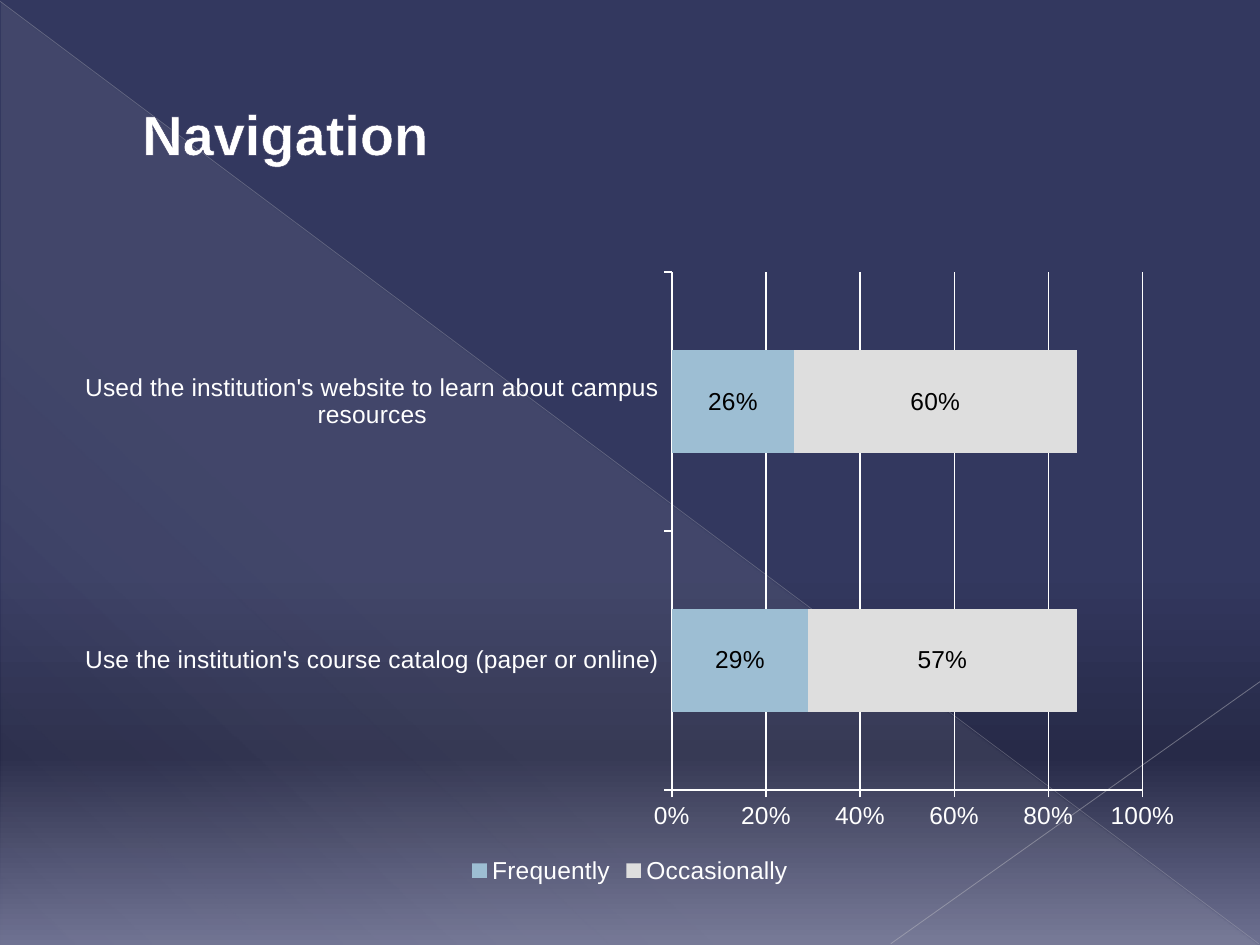
import pptx
import pptx.util
import pptx.chart.data
import pptx.dml.color
import pptx.enum.chart
import pptx.enum.shapes
import pptx.enum.text
import pptx.oxml
import pptx.oxml.ns

Pt = pptx.util.Pt
qn = pptx.oxml.ns.qn
RGB = pptx.dml.color.RGBColor.from_string
NS = pptx.oxml.ns.nsdecls("a")
COLORS = {
    "navy": "33385F", "dark": "272A48", "haze": "6E7191", "grey": "DEDEDE",
    "diagonal": "B7B7BE", "corner": "BFBFC5", "white": "FFFFFF",
    "black": "000000", "blue": "9DBED3", "outline": "3A3A60",
}


def set_gradient(fill, root, stops, angle):
    fill.gradient()
    old = next(root.iter(qn("a:gradFill")))
    gs = "".join(
        f'<a:gs pos="{pos * 1000}"><a:srgbClr val="{COLORS[color]}">'
        f'<a:alpha val="{alpha * 1000}"/></a:srgbClr></a:gs>'
        for pos, color, alpha in stops)
    new = pptx.oxml.parse_xml(
        f'<a:gradFill {NS} rotWithShape="1"><a:gsLst>{gs}</a:gsLst>'
        f'<a:lin ang="{angle * 60000}" scaled="0"/></a:gradFill>')
    old.getparent().replace(old, new)


def set_font(font, **values):
    font.color.rgb = RGB(COLORS[values.pop("color")])
    for name, value in values.items():
        setattr(font, name, value)


prs = pptx.Presentation()
prs.slide_width, prs.slide_height = Pt(720), Pt(540)
s = prs.slides.add_slide(prs.slide_layouts[6])
set_gradient(s.background.fill, s.element,
             [(60, "navy", 100), (80, "dark", 100), (100, "haze", 100)], 90)

sp = s.shapes.add_shape(pptx.enum.shapes.MSO_SHAPE.RIGHT_TRIANGLE,
                        Pt(0.72), Pt(1.44), Pt(718.56), Pt(538.56))
sp.shadow.inherit = False
sp.line.fill.background()
set_gradient(sp.fill, sp.element,
             [(0, "grey", 10), (70, "grey", 8), (100, "grey", 1)], 133)

for x1, y1, x2, y2, color, width, alpha in [
    (0, 0.72, 719.28, 539.28, "diagonal", 0.39, 35),
    (720, 389.52, 509.04, 539.28, "corner", 0.47, 45),
]:
    cx = s.shapes.add_connector(pptx.enum.shapes.MSO_CONNECTOR.STRAIGHT,
                                Pt(x1), Pt(y1), Pt(x2), Pt(y2))
    cx.line.width = Pt(width)
    cx.line.color.rgb = RGB(COLORS[color])
    clr = next(cx.element.iter(qn("a:srgbClr")))
    clr.append(pptx.oxml.parse_xml(f'<a:alpha {NS} val="{alpha * 1000}"/>'))
    cx.element.spPr.append(pptx.oxml.parse_xml(f"<a:effectLst {NS}/>"))

sp = s.shapes.add_textbox(Pt(36), Pt(20.88), Pt(648), Pt(110.16))
tf = sp.text_frame
tf.word_wrap = True
tf.vertical_anchor = pptx.enum.text.MSO_ANCHOR.MIDDLE
p = tf.paragraphs[0]
p._p.get_or_add_pPr().set("marL", str(Pt(38.16)))
r = p.add_run()
r.text = "Navigation"
set_font(r.font, name="Arial", size=Pt(32), bold=True, color="white")
r._r.get_or_add_rPr().insert(0, pptx.oxml.parse_xml(
    f'<a:ln {NS} w="{Pt(0.5)}"><a:solidFill><a:srgbClr val="{COLORS["outline"]}"/>'
    "</a:solidFill></a:ln>"))

data = pptx.chart.data.CategoryChartData(number_format="0%")
data.categories = ["Use the institution's course catalog (paper or online)",
                   "Used the institution's website to learn about campus resources"]
data.add_series("Frequently", [0.29, 0.26])
data.add_series("Occasionally", [0.57, 0.6])
chart = s.shapes.add_chart(pptx.enum.chart.XL_CHART_TYPE.BAR_STACKED,
                           Pt(36), Pt(148.32), Pt(648), Pt(360), data).chart
set_font(chart.font, name="Arial", size=Pt(14), color="white")
chart.has_title = False
chart.has_legend = True
chart.legend.position = pptx.enum.chart.XL_LEGEND_POSITION.BOTTOM
chart.legend.include_in_layout = False

plot_area = next(chart._chartSpace.iter(qn("c:plotArea")))
for old in plot_area.findall(qn("c:layout")):
    plot_area.remove(old)
frame = "".join(f'<c:{tag} val="{val}"/>' for tag, val in [
    ("layoutTarget", "inner"), ("xMode", "edge"), ("yMode", "edge"),
    ("x", 0.537), ("y", 0.02), ("w", 0.415), ("h", 0.822)])
plot_area.insert(0, pptx.oxml.parse_xml(
    f'<c:layout {pptx.oxml.ns.nsdecls("c")}><c:manualLayout>{frame}'
    "</c:manualLayout></c:layout>"))

val_axis = chart.value_axis
for name, value in {"minimum_scale": 0, "maximum_scale": 1, "major_unit": 0.2,
                    "has_major_gridlines": True}.items():
    setattr(val_axis, name, value)
val_axis.tick_labels.number_format = "0%"
val_axis.tick_labels.number_format_is_linked = False
for axis in (chart.category_axis, val_axis):
    axis.major_tick_mark = pptx.enum.chart.XL_TICK_MARK.OUTSIDE
for line in (chart.category_axis.format.line, val_axis.format.line,
             val_axis.major_gridlines.format.line):
    line.color.rgb = RGB(COLORS["white"])
    line.width = Pt(0.75)

plot = chart.plots[0]
plot.gap_width, plot.overlap = 150, 100
plot.vary_by_categories = False
for series, color in zip(plot.series, ("blue", "grey")):
    series.format.fill.solid()
    series.format.fill.fore_color.rgb = RGB(COLORS[color])
    labels = series.data_labels
    for name, value in {"show_value": True, "number_format": "0%",
                        "number_format_is_linked": False}.items():
        setattr(labels, name, value)
    set_font(labels.font, name="Arial", size=Pt(14), color="black")

prs.save("out.pptx")
